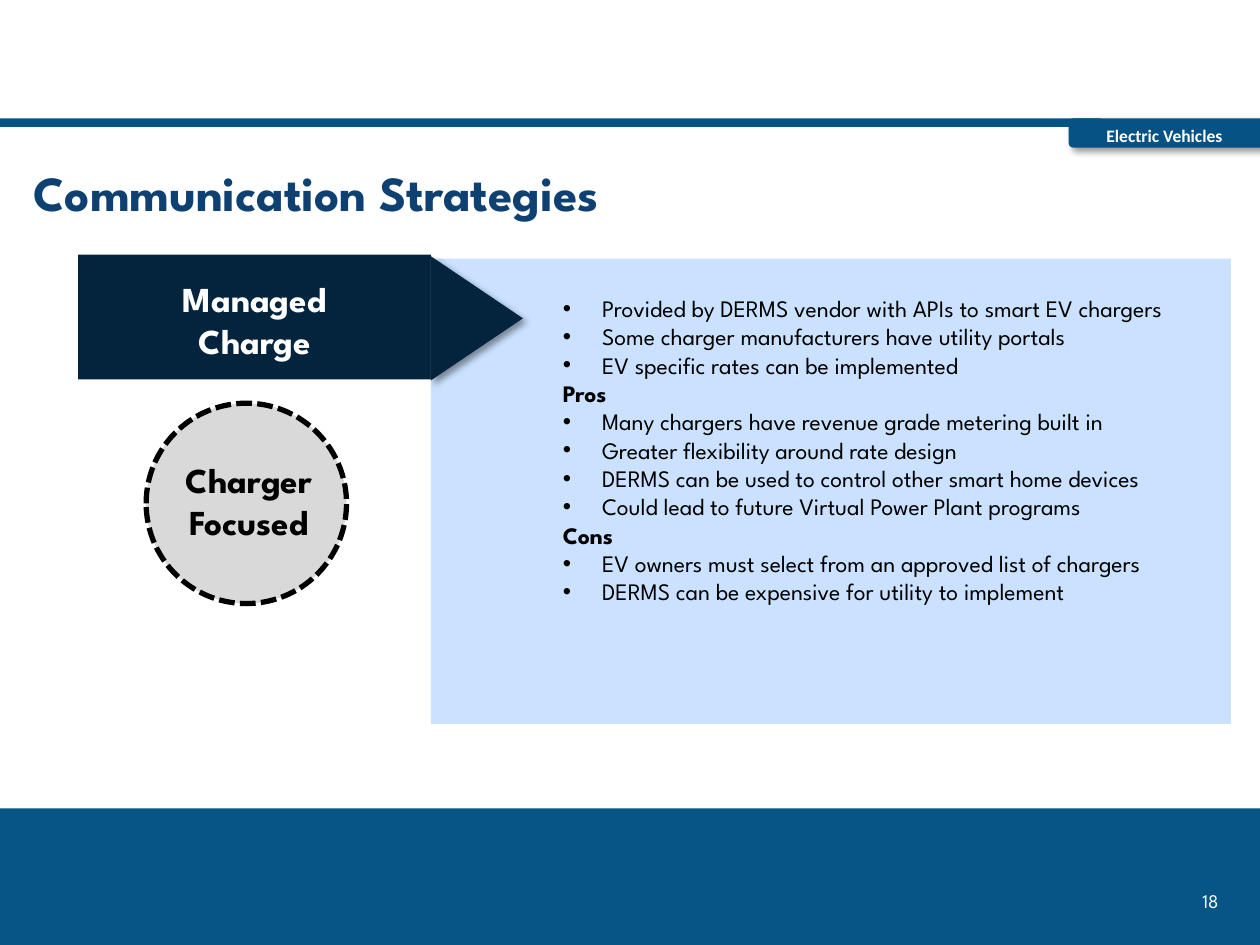
"""Build the Communication Strategies slide on managed EV charging."""
import pptx
import pptx.util
import pptx.dml.color
import pptx.enum.dml
import pptx.enum.shapes
import pptx.enum.text
import pptx.oxml
import pptx.oxml.ns

Pt = pptx.util.Pt
SHAPE = pptx.enum.shapes.MSO_SHAPE
ALIGN = pptx.enum.text.PP_ALIGN
ANCHOR = pptx.enum.text.MSO_ANCHOR
COLORS = {
    "footer": "075487", "header": "075285", "title": "0E4172", "navy": "04243D",
    "panel": "CAE2FF", "circle": "D9D9D9", "black": "000000", "white": "FFFFFF",
}
NS = pptx.oxml.ns.nsdecls("a")
SHADOW = (
    f'<a:outerShdw {NS} blurRad="50800" dist="38100" dir="2700000" algn="tl" rotWithShape="0">'
    f'<a:srgbClr val="{COLORS["black"]}"><a:alpha val="40000"/></a:srgbClr></a:outerShdw>'
)

deck = pptx.Presentation()
deck.slide_width, deck.slide_height = Pt(720), Pt(540)
slide = deck.slides.add_slide(deck.slide_layouts[6])


def add_block(kind, box, color, shadow=False):
    block = slide.shapes.add_shape(kind, *map(Pt, box))
    block.fill.solid()
    block.fill.fore_color.rgb = pptx.dml.color.RGBColor.from_string(COLORS[color])
    block.line.fill.background()
    block.shadow.inherit = False
    if shadow:
        effects = block._element.spPr.find(pptx.oxml.ns.qn("a:effectLst"))
        effects.append(pptx.oxml.parse_xml(SHADOW))
    return block


def add_text(box, lines, color, font_format, align=ALIGN.LEFT, anchor=ANCHOR.MIDDLE):
    frame = slide.shapes.add_textbox(*map(Pt, box)).text_frame
    frame.word_wrap = True
    frame.vertical_anchor = anchor
    for number, (line, overrides, bulleted) in enumerate(lines):
        paragraph = frame.add_paragraph() if number else frame.paragraphs[0]
        paragraph.alignment = align
        if bulleted:
            properties = paragraph._p.get_or_add_pPr()
            properties.set("marL", str(Pt(22.5)))
            properties.set("indent", str(-Pt(22.5)))
            properties.append(pptx.oxml.parse_xml(f'<a:buFont {NS} typeface="Arial"/>'))
            properties.append(pptx.oxml.parse_xml(f'<a:buChar {NS} char="•"/>'))
        run = paragraph.add_run()
        run.text = line
        run.font.color.rgb = pptx.dml.color.RGBColor.from_string(COLORS[color])
        for attribute, value in {**font_format, **overrides}.items():
            setattr(run.font, attribute, value)


title_format = {"name": "League Spartan", "size": Pt(28), "bold": True}
label_format = {"name": "League Spartan", "size": Pt(20), "bold": True}
section_format = {"name": "Calibri", "size": Pt(10), "bold": True}
number_format = {"name": "League Spartan", "size": Pt(11), "bold": False}
body_format = {"name": "League Spartan", "size": Pt(13.5), "bold": False}

add_block(SHAPE.RECTANGLE, (0, 462, 720, 78), "footer")
add_text((12, 87, 691, 45), [("Communication Strategies", {}, False)], "title", title_format)
add_text((671.5, 503, 32, 23), [("18", {}, False)], "white", number_format, ALIGN.RIGHT)

add_block(SHAPE.ROUNDED_RECTANGLE, (610.7, 67.6, 116, 16.8), "header", shadow=True)
add_block(SHAPE.RECTANGLE, (0, 67.6, 629, 5), "header")
add_text((610.7, 67.6, 109.3, 19.4), [("Electric Vehicles", {}, False)],
         "white", section_format, ALIGN.CENTER)

add_block(SHAPE.RECTANGLE, (44.7, 145.6, 201.6, 71.2), "navy")
add_text((77.6, 152.6, 136, 60), [("Managed Charge", {}, False)],
         "white", label_format, ALIGN.CENTER)
add_block(SHAPE.RECTANGLE, (246.2, 147.8, 457.2, 265.8), "panel")
pointer = add_block(SHAPE.ISOSCELES_TRIANGLE, (237, 155.6, 71, 52.6), "navy", shadow=True)
pointer.rotation = 90

charger_circle = add_block(SHAPE.OVAL, (83.5, 230.4, 114.5, 114.5), "circle")
charger_circle.line.color.rgb = pptx.dml.color.RGBColor.from_string(COLORS["black"])
charger_circle.line.width = Pt(3)
charger_circle.line.dash_style = pptx.enum.dml.MSO_LINE.SQUARE_DOT
add_text((71.3, 258.5, 142, 55.5), [("Charger Focused", {}, False)],
         "black", label_format, ALIGN.CENTER)

sections = {
    "": ["Provided by DERMS vendor with APIs to smart EV chargers",
         "Some charger manufacturers have utility portals",
         "EV specific rates can be implemented"],
    "Pros": ["Many chargers have revenue grade metering built in",
             "Greater flexibility around rate design",
             "DERMS can be used to control other smart home devices",
             "Could lead to future Virtual Power Plant programs"],
    "Cons": ["EV owners must select from an approved list of chargers",
             "DERMS can be expensive for utility to implement"],
}
strategy_lines = []
for heading, points in sections.items():
    if heading:
        strategy_lines.append((heading, {"bold": True}, False))
    strategy_lines += [(point, {}, True) for point in points]
add_text((314.5, 164.4, 389, 236), strategy_lines, "black", body_format, anchor=ANCHOR.TOP)

deck.save("out.pptx")
